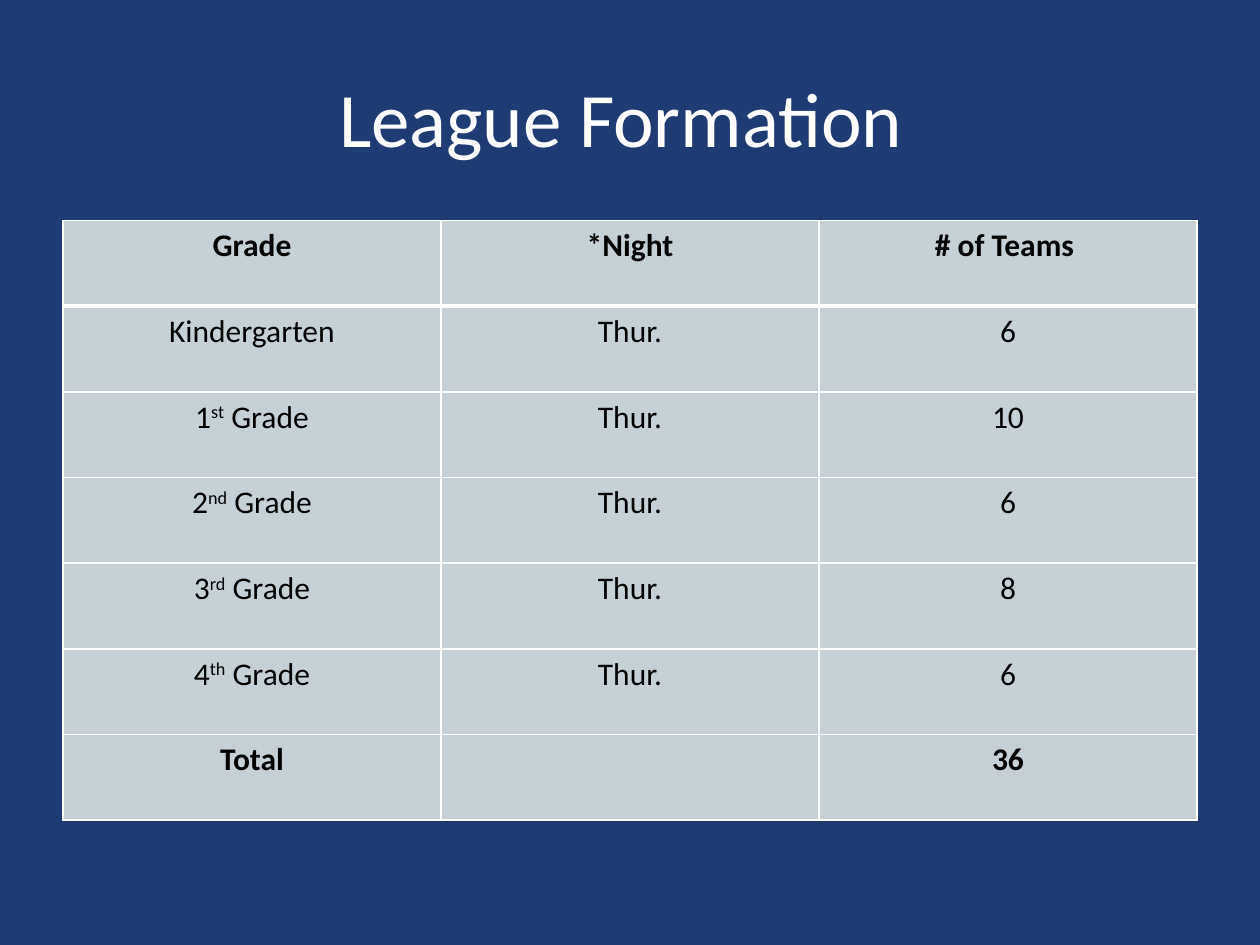
from lxml.etree import SubElement
from pptx import Presentation
from pptx.dml.color import RGBColor
from pptx.enum.text import MSO_ANCHOR, PP_ALIGN
from pptx.oxml.ns import qn
from pptx.util import Inches, Pt

COLORS = {"background": "1F3B73", "title": "FFFFFF", "text": "000000",
          "cell": "C5D1D7", "border": "FFFFFF"}
FONT = "Calibri"
HEADER = ("Grade", "*Night", "# of Teams ")
LEAGUES = (
    (("Kindergarten",), 6),
    (("1", "st", " Grade"), 10),
    (("2", "nd", " Grade"), 6),
    (("3", "rd", " Grade"), 8),
    (("4", "th", " Grade"), 6),
)
NIGHT = "Thur."


def write_text(paragraph, text, size=18, color="text", bold=False, superscript=False):
    """Add one centred, formatted run to a paragraph."""
    paragraph.alignment = PP_ALIGN.CENTER
    run = paragraph.add_run()
    run.text = text
    run.font.name = FONT
    run.font.size = Pt(size)
    run.font.bold = bold
    run.font.color.rgb = RGBColor.from_string(COLORS[color])
    if superscript:
        run.font._element.set("baseline", "30000")


def style_cell(cell, top=1, bottom=1):
    """Give a cell its borders, with widths in points, and its fill."""
    properties = cell._tc.get_or_add_tcPr()
    for side, width in (("L", 1), ("R", 1), ("T", top), ("B", bottom)):
        line = SubElement(properties, qn(f"a:ln{side}"), w=str(Pt(width)))
        fill = SubElement(line, qn("a:solidFill"))
        SubElement(fill, qn("a:srgbClr"), val=COLORS["border"])
    cell.fill.solid()
    cell.fill.fore_color.rgb = RGBColor.from_string(COLORS["cell"])


def add_title(slide, left, top, width, height):
    """Place the slide title in the given box."""
    text_frame = slide.shapes.add_textbox(left, top, width, height).text_frame
    text_frame.word_wrap = True
    text_frame.vertical_anchor = MSO_ANCHOR.MIDDLE
    write_text(text_frame.paragraphs[0], "League Formation ", size=44, color="title")


def add_league_table(slide, left, top, width, height):
    """Place the table of grades, nights and team counts in the given box."""
    total = sum(teams for _, teams in LEAGUES)
    rows = [[(heading,) for heading in HEADER]]
    rows += [[grade, (NIGHT,), (str(teams),)] for grade, teams in LEAGUES]
    rows.append([("Total",), (), (str(total),)])
    table = slide.shapes.add_table(len(rows), len(HEADER), left, top, width, height).table
    for row_index, row in enumerate(rows):
        bold = row_index in (0, len(rows) - 1)
        for column_index, parts in enumerate(row):
            cell = table.cell(row_index, column_index)
            style_cell(cell, top=3 if row_index == 1 else 1,
                       bottom=3 if row_index == 0 else 1)
            for part_index, part in enumerate(parts):
                write_text(cell.text_frame.paragraphs[0], part, bold=bold,
                           superscript=part_index == 1)


def main():
    """Build and save the presentation."""
    presentation = Presentation()
    presentation.slide_width = Inches(10)
    presentation.slide_height = Inches(7.5)
    slide = presentation.slides.add_slide(presentation.slide_layouts[6])
    slide.background.fill.solid()
    slide.background.fill.fore_color.rgb = RGBColor.from_string(COLORS["background"])
    add_title(slide, Inches(0.5), Inches(0.3), Inches(9), Inches(1.25))
    add_league_table(slide, Inches(0.5), Inches(1.75), Inches(9), Inches(4.76))
    presentation.save("out.pptx")


if __name__ == "__main__":
    main()
